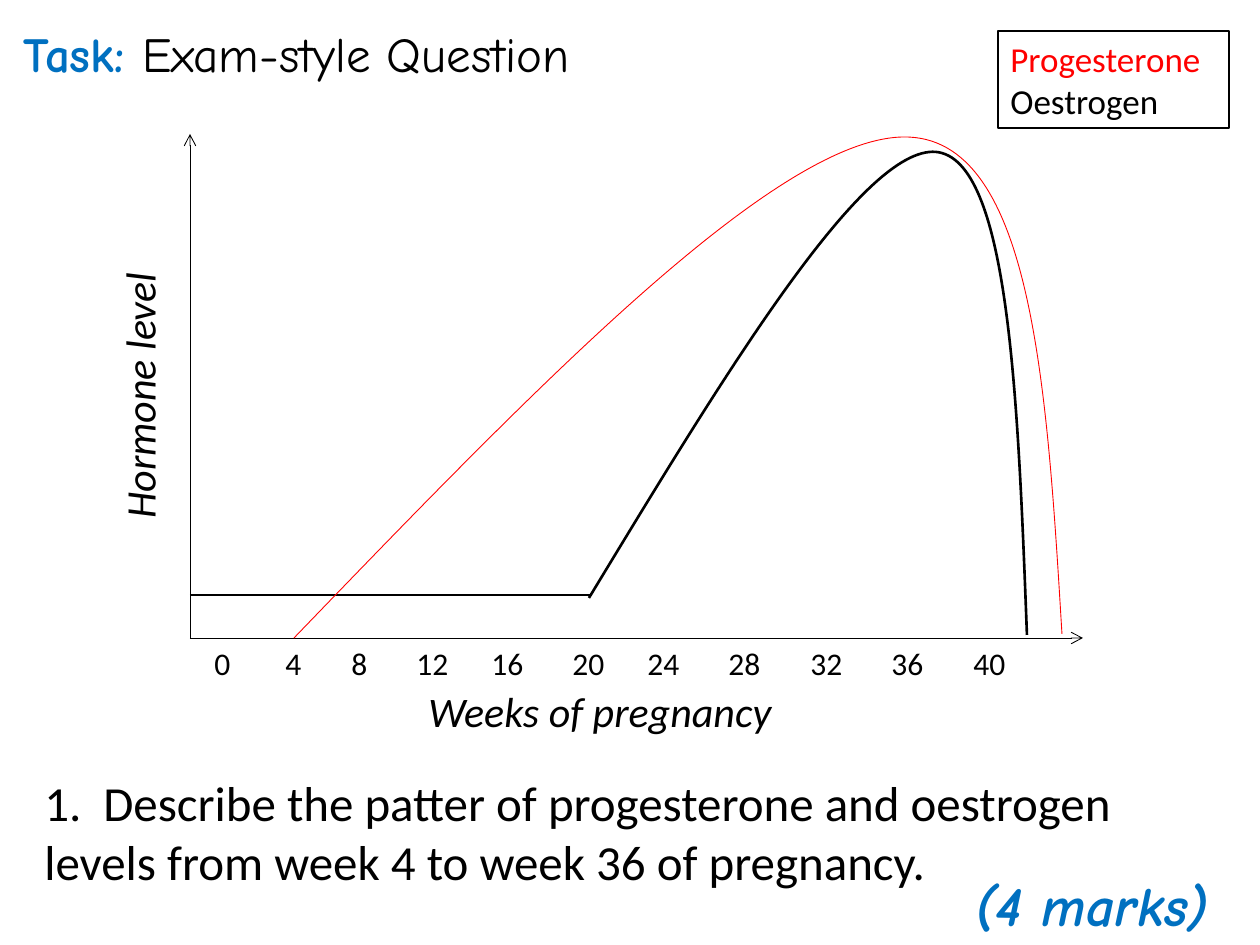
"""Build an exam-question slide with a sketch graph of hormone levels in pregnancy."""
from lxml import etree
from pptx import Presentation, util as u
from pptx.dml.color import RGBColor
from pptx.enum import shapes, text
from pptx.oxml import ns

PX = u.Inches(1) / 126
BLACK = RGBColor(0, 0, 0)
RED = RGBColor(255, 0, 0)
BLUE = RGBColor(0, 112, 192)


def px(length):
    return round(length * PX)


def write(holder, runs, size, font="Calibri", align=text.PP_ALIGN.LEFT, italic=False, spacing=None, tabs=()):
    holder.text_frame.word_wrap = True
    line = holder.text_frame.paragraphs[0]
    if line.runs:
        line = holder.text_frame.add_paragraph()
    line.alignment = align
    line.line_spacing = spacing
    for words, colour, bold in runs:
        run = line.add_run()
        run.text = words
        run.font.name, run.font.size = font, u.Pt(size)
        run.font.bold, run.font.italic = bold, italic
        run.font.color.rgb = colour
    if tabs:
        stops = etree.SubElement(line._p.get_or_add_pPr(), ns.qn("a:tabLst"))
        for place, kind in tabs:
            etree.SubElement(stops, ns.qn("a:tab"), pos=str(px(place)), algn=kind)


deck = Presentation()
deck.slide_width, deck.slide_height = px(1260), px(945)
slide = deck.slides.add_slide(deck.slide_layouts[6])
parts = slide.shapes

title = parts.add_textbox(px(11), px(24), px(1197), px(58))
write(title, [("Task: ", BLUE, True), ("Exam-style Question", BLACK, False)], 28, "Comic Neue", spacing=0.9)

marks = parts.add_textbox(px(945), px(864), px(294), px(81))
write(marks, [("(4 marks)", BLUE, True)], 32, "Comic Neue", text.PP_ALIGN.CENTER, italic=True)

origin_x, origin_y = 190, 638
for start, end, weight, arrow in (
    ((origin_x, origin_y), (origin_x, 134), 0.5, True),
    ((origin_x, origin_y), (1083, origin_y), 0.5, True),
    ((origin_x, 595), (590, 595), 1.5, False),
):
    line = parts.add_connector(shapes.MSO_CONNECTOR.STRAIGHT, *map(px, start + end))
    line.line.color.rgb = BLACK
    line.line.width = u.Pt(weight)
    if arrow:
        etree.SubElement(line.line._get_or_add_ln(), ns.qn("a:tailEnd"), type="arrow")
    etree.SubElement(line._element.spPr, ns.qn("a:effectLst"))

weeks_left, inset = 202, 13
week_centres = (221, 294, 360, 433, 508, 589, 664, 745, 827, 908, 990)
week_stops = [(centre - weeks_left - inset, "ctr") for centre in week_centres[1:]]
weeks = parts.add_textbox(px(weeks_left), px(638), px(882), px(50))
write(weeks, [("\t".join(str(week) for week in range(0, 41, 4)), BLACK, False)], 18, tabs=week_stops)

for caption, left, top, turn in (("Weeks of pregnancy", 411, 679, 0), ("Hormone level", -50, 364, 270)):
    axis_title = parts.add_textbox(px(left), px(top), px(378), px(63))
    axis_title.rotation = turn
    write(axis_title, [(caption, BLACK, False)], 24, align=text.PP_ALIGN.CENTER, italic=True)

oestrogen = [(589, 598), (726, 372), (863, 146), (936, 152), (1009, 159), (1018, 397), (1027, 635)]
progesterone = [(294, 638), (535, 388), (776, 138), (904, 137), (1032, 136), (1047, 385), (1062, 634)]
for points, colour, weight in ((oestrogen, BLACK, 1.5), (progesterone, RED, 0.5)):
    outline = parts.build_freeform(*points[0], scale=PX)
    outline.add_line_segments(points[1:], close=False)
    curve = outline.convert_to_shape()
    curve.shadow.inherit = False
    curve.fill.background()
    curve.line.color.rgb = colour
    curve.line.width = u.Pt(weight)
    track = next(curve._element.iter(ns.qn("a:path")))
    segments = track.findall(ns.qn("a:lnTo"))
    for first in range(0, len(segments), 3):
        bend = etree.SubElement(track, ns.qn("a:cubicBezTo"))
        for segment in segments[first:first + 3]:
            bend.append(segment[0])
            track.remove(segment)

question = parts.add_textbox(px(32), px(766), px(1166), px(131))
write(question, [("1.\tDescribe the patter of progesterone and oestrogen levels from week 4 to week 36 of pregnancy.",
                  BLACK, False)], 28, tabs=[(59, "l")])

legend = parts.add_shape(shapes.MSO_SHAPE.RECTANGLE, px(998), px(31), px(231), px(97))
legend.shadow.inherit = False
legend.fill.background()
legend.line.color.rgb = BLACK
legend.line.width = u.Pt(0.75)
for hormone, colour in (("Progesterone", RED), ("Oestrogen", BLACK)):
    write(legend, [(hormone, colour, False)], 20)

deck.save("out.pptx")
